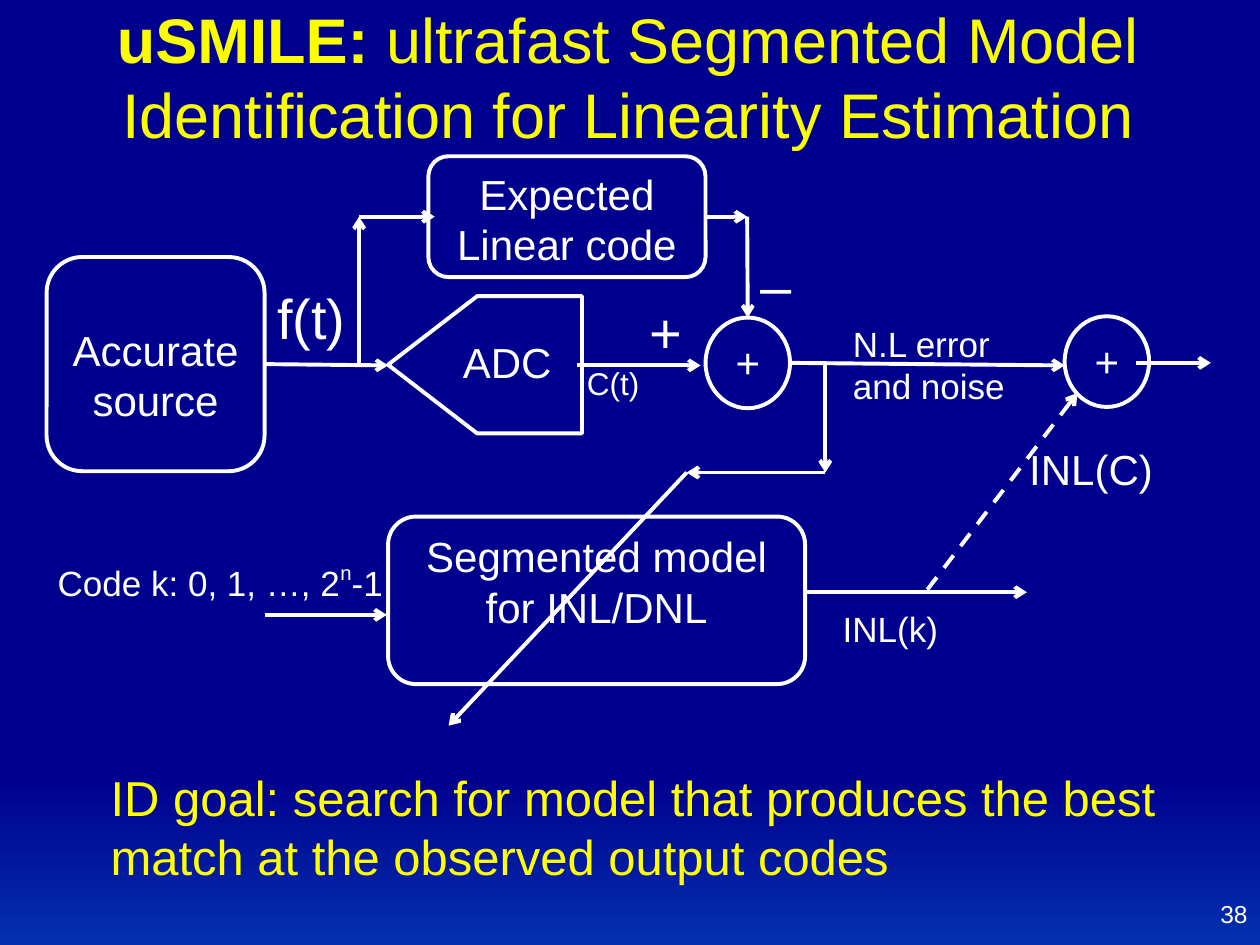
from pptx import Presentation
from pptx.util import Inches, Pt
from pptx.dml.color import RGBColor
from pptx.enum.dml import MSO_LINE
from pptx.enum.shapes import MSO_CONNECTOR, MSO_SHAPE
from pptx.enum.text import MSO_ANCHOR, PP_ALIGN
from pptx.oxml.ns import qn
from lxml.etree import SubElement

WHITE = "FFFFFF"


def paint(color, code):
    color.rgb = RGBColor.from_string(code)


def write(shape, text, size, code=WHITE, align=PP_ALIGN.LEFT, anchor=MSO_ANCHOR.TOP, wrap=True):
    frame = shape.text_frame
    frame.word_wrap = wrap
    frame.vertical_anchor = anchor
    frame.text = text
    for para in frame.paragraphs:
        para.alignment = align
        para.font.size = Pt(size)
        para.font.name = "Arial"
        paint(para.font.color, code)
        for run in para.runs:
            run.font.size = Pt(size)
            run.font.name = "Arial"
            paint(run.font.color, code)
    return frame


prs = Presentation()
prs.slide_width = Inches(10)
prs.slide_height = Inches(7.5)
slide = prs.slides.add_slide(prs.slide_layouts[6])
shapes = slide.shapes

fill = slide.background.fill
fill.gradient()
fill.gradient_angle = 270
for stop, (place, code) in zip(fill.gradient_stops, [(0.82, "00008E"), (1, "0330AF")]):
    stop.position = place
    paint(stop.color, code)

title = shapes.add_textbox(Inches(0.36), Inches(0.33), Inches(9.25), Inches(0.92))
frame = write(title, "uSMILE: ", 36, "FAFD00", PP_ALIGN.CENTER, MSO_ANCHOR.BOTTOM)
frame.paragraphs[0].runs[0].font.bold = True
rest = frame.paragraphs[0].add_run()
rest.text = "ultrafast Segmented Model Identification for Linearity Estimation"
rest.font.size = Pt(36)
rest.font.name = "Arial"
paint(rest.font.color, "FAFD00")

blocks = [
    ("source", MSO_SHAPE.ROUNDED_RECTANGLE, 0.37, 2.04, 1.73, 1.7, "Accurate source", 0.45),
    ("adc", MSO_SHAPE.PENTAGON, 3.08, 2.35, 1.54, 1.09, "ADC", 0.32),
    ("linear", MSO_SHAPE.ROUNDED_RECTANGLE, 3.4, 1.24, 2.2, 0.96, "Expected\nLinear code", 0.05),
    ("sum", MSO_SHAPE.OVAL, 5.6, 2.52, 0.67, 0.72, "+", 0.05),
    ("model", MSO_SHAPE.ROUNDED_RECTANGLE, 3.08, 4.1, 3.31, 1.33, "Segmented model for INL/DNL", 0.05),
    ("total", MSO_SHAPE.OVAL, 8.45, 2.51, 0.67, 0.72, "+", 0.05),
]
nodes = {}
for name, kind, x, y, w, h, text, inset in blocks:
    node = shapes.add_shape(kind, Inches(x), Inches(y), Inches(w), Inches(h))
    node.shadow.inherit = False
    node.fill.background()
    node.line.width = Pt(2.25)
    paint(node.line.color, WHITE)
    frame = write(node, text, 24, align=PP_ALIGN.CENTER)
    frame.margin_top = Inches(inset)
    nodes[name] = node
nodes["adc"].adjustments[0] = 0.65
nodes["adc"]._element.spPr.find(qn("a:xfrm")).set("flipH", "1")

wires = [
    (2.1, 2.9, 3.08, 2.9, ("source", 3), None),
    (4.58, 2.9, 5.56, 2.9, None, None),
    (2.85, 1.72, 3.45, 1.72, None, None),
    (2.85, 2.9, 2.85, 1.72, None, None),
    (5.6, 1.72, 5.93, 1.72, ("linear", 3), None),
    (5.93, 1.72, 5.93, 2.52, None, ("sum", 0)),
    (6.27, 2.88, 8.45, 2.9, None, None),
    (2.1, 4.88, 3.07, 4.88, None, None),
    (5.45, 3.75, 3.56, 5.76, None, None),
    (6.55, 3.75, 5.45, 3.75, None, None),
    (6.55, 2.9, 6.55, 3.75, None, None),
    (6.37, 4.7, 8.15, 4.7, None, None),
    (9.02, 2.88, 9.61, 2.88, None, None),
    (7.36, 4.68, 8.55, 3.12, None, None),
]
for x1, y1, x2, y2, start, end in wires:
    wire = shapes.add_connector(MSO_CONNECTOR.STRAIGHT, Inches(x1), Inches(y1), Inches(x2), Inches(y2))
    if start:
        wire.begin_connect(nodes[start[0]], start[1])
    if end:
        wire.end_connect(nodes[end[0]], end[1])
    wire.line.width = Pt(2.25)
    paint(wire.line.color, WHITE)
    props = wire._element.spPr
    SubElement(props.find(qn("a:ln")), qn("a:tailEnd"), type="arrow")
    SubElement(props, qn("a:effectLst"))
wire.line.dash_style = MSO_LINE.DASH

labels = [
    ("f(t)", 2.1, 2.2, 0.75, 0.64, 32),
    ("C(t)", 4.56, 2.84, 0.86, 0.57, 18),
    ("+", 5.06, 2.31, 0.46, 0.64, 32),
    ("–", 5.94, 1.94, 0.45, 0.64, 32),
    ("N.L error\nand noise", 6.67, 2.51, 1.42, 0.77, 20),
    ("INL(C)", 8.07, 3.47, 1.19, 0.5, 24),
    ("INL(k)", 6.59, 4.77, 1.23, 0.44, 20),
    ("Code k: 0, 1, …, 2", 0.36, 4.4, 2.94, 0.44, 20),
]
for text, x, y, w, h, size in labels:
    label = shapes.add_textbox(Inches(x), Inches(y), Inches(w), Inches(h))
    frame = write(label, text, size, wrap=False)

for text, base in [("n", "46000"), ("-1", "0")]:
    run = frame.paragraphs[0].add_run()
    run.text = text
    run.font.size = Pt(20)
    run.font.name = "Arial"
    paint(run.font.color, WHITE)
    run._r.get_or_add_rPr().set("baseline", base)

goal = shapes.add_textbox(Inches(0.78), Inches(6.04), Inches(8.84), Inches(1.04))
write(goal, "ID goal: search for model that produces the best match at the observed output codes", 28, "FFFF00")

page = shapes.add_textbox(Inches(7.92), Inches(7), Inches(2.08), Inches(0.5))
write(page, "38", 14, align=PP_ALIGN.RIGHT, anchor=MSO_ANCHOR.MIDDLE)

prs.save("out.pptx")
